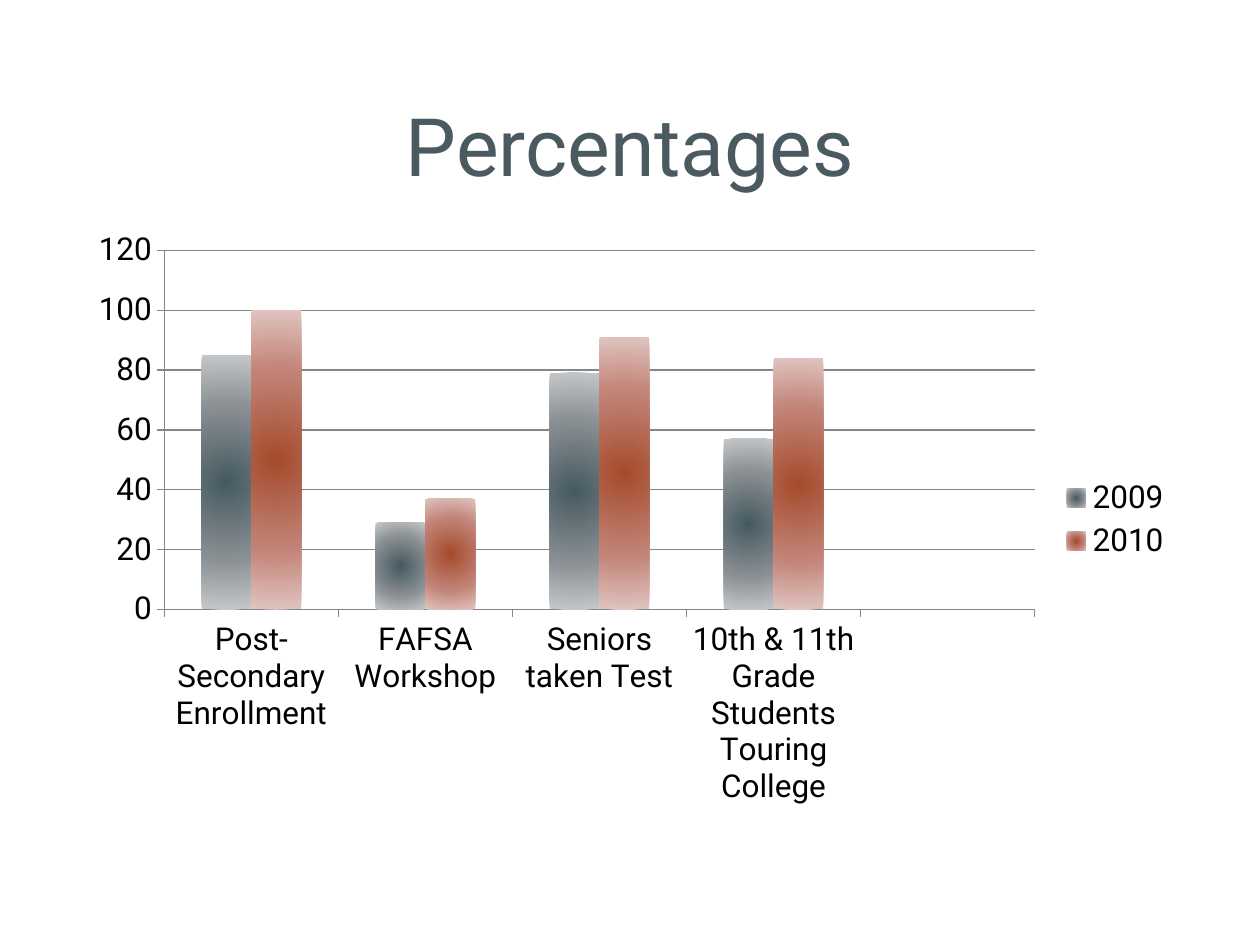
"""Build a slide with a clustered column chart of yearly percentages."""
from lxml import etree
from pptx import Presentation
from pptx import util as u
from pptx.chart.data import CategoryChartData
from pptx.dml.color import RGBColor
from pptx.enum import chart as ch, text
from pptx.oxml import parse_xml
from pptx.oxml.ns import nsdecls, qn

Pt = u.Pt


def color(value):
    return RGBColor.from_string(value)


def radial_fill(stops):
    marks = "".join(
        f'<a:gs pos="{pos * 1000}"><a:srgbClr val="{value}"/></a:gs>' for pos, value in stops
    )
    return parse_xml(
        f'<a:gradFill {nsdecls("a")} rotWithShape="1"><a:gsLst>{marks}</a:gsLst>'
        '<a:path path="circle"><a:fillToRect l="50000" t="50000" r="50000" b="50000"/>'
        "</a:path></a:gradFill>"
    )


prs = Presentation()
prs.slide_width, prs.slide_height = Pt(720), Pt(540)
slide = prs.slides.add_slide(prs.slide_layouts[6])
left, width = Pt(43.2), Pt(633.6)

title = slide.shapes.add_textbox(left, Pt(8.64), width, Pt(105.12)).text_frame
title.word_wrap = True
title.vertical_anchor = text.MSO_ANCHOR.BOTTOM
heading = title.paragraphs[0]
heading.text = "Percentages"
heading.alignment = text.PP_ALIGN.CENTER
for key, value in {"name": "Roboto", "size": Pt(46)}.items():
    setattr(heading.runs[0].font, key, value)
heading.runs[0].font.color.rgb = color("4B5A60")

results = CategoryChartData()
results.categories = [
    "Post-Secondary Enrollment",
    "FAFSA Workshop",
    "Seniors taken Test",
    "10th & 11th Grade Students Touring College",
    "",
]
results.add_series("2009", [85, 29, 79, 57, None])
results.add_series("2010", [100, 37, 91, 84, None])
percentages = slide.shapes.add_chart(
    ch.XL_CHART_TYPE.COLUMN_CLUSTERED, left, Pt(126), width, Pt(342), results
).chart
percentages.has_title = False
for key, value in {"name": "Roboto", "size": Pt(18)}.items():
    setattr(percentages.font, key, value)
percentages.font.color.rgb = color("000000")

percentages.has_legend = True
percentages.legend.position = ch.XL_LEGEND_POSITION.RIGHT
percentages.legend.include_in_layout = False

columns = percentages.plots[0]
for key, value in {"gap_width": 150, "overlap": 0, "vary_by_categories": False}.items():
    setattr(columns, key, value)
shades = [
    [(0, "455A60"), (60, "8B9094"), (100, "C4C8CA")],
    [(0, "A54B2C"), (60, "C28478"), (100, "E0C4C0")],
]
for year, stops in zip(columns.series, shades):
    year.format.fill.solid()
    solid = year.format.fill._xPr.find(qn("a:solidFill"))
    solid.getparent().replace(solid, radial_fill(stops))
    year.format.line.fill.background()

scale = percentages.value_axis
for key, value in {"minimum_scale": 0, "maximum_scale": 120, "major_unit": 20}.items():
    setattr(scale, key, value)
scale.has_major_gridlines = True
for axis in (scale, percentages.category_axis):
    axis.major_tick_mark = ch.XL_TICK_MARK.OUTSIDE
    axis.minor_tick_mark = ch.XL_TICK_MARK.NONE
for line in (scale.format.line, scale.major_gridlines.format.line,
             percentages.category_axis.format.line):
    line.color.rgb = color("868686")
    line.width = Pt(0.75)

plot_area = percentages._chartSpace.chart.plotArea
for old in plot_area.findall(qn("c:layout")):
    plot_area.remove(old)
layout = etree.Element(qn("c:layout"))
manual = etree.SubElement(layout, qn("c:manualLayout"))
for key, value in {"layoutTarget": "inner", "xMode": "edge", "yMode": "edge",
                   "x": 0.08, "y": 0.05, "w": 0.785, "h": 0.6}.items():
    etree.SubElement(manual, qn(f"c:{key}")).set("val", str(value))
plot_area.insert(0, layout)

prs.save("out.pptx")
